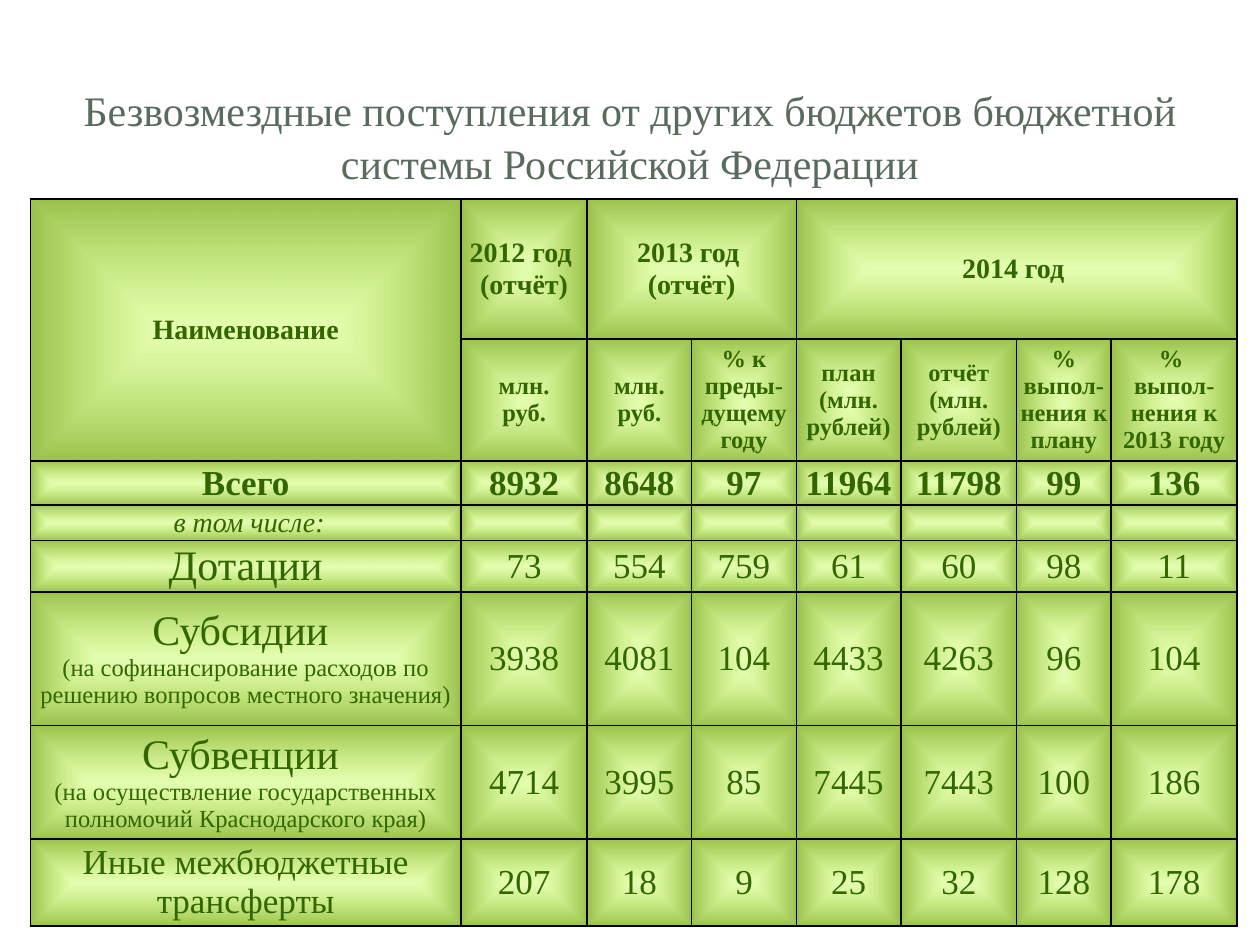
from dataclasses import dataclass

from lxml import etree
from pptx import Presentation
from pptx.dml.color import RGBColor
from pptx.enum.text import MSO_ANCHOR, PP_ALIGN
from pptx.oxml import parse_xml
from pptx.oxml.ns import nsdecls
from pptx.util import Inches, Pt

CENTER = PP_ALIGN.CENTER
MIDDLE, BOTTOM = MSO_ANCHOR.MIDDLE, MSO_ANCHOR.BOTTOM
SLIDE_W, SLIDE_H = Inches(10), Inches(7.5)


@dataclass(frozen=True)
class Theme:
    font: str = "Times New Roman"
    title: str = "596B5D"
    text: str = "336600"
    border: str = "000000"
    border_pt: float = 1
    glow: str = "CCFF66"
    edge: str = "9AC14D"
    big: int = 24
    figure: int = 20
    head: int = 16
    small: int = 14


THEME = Theme()
COLS = [3.42, 1, 0.83, 0.83, 0.83, 0.92, 0.75, 1]
ROWS = [1.11, 0.97, 0.35, 0.28, 0.41, 1.06, 0.9, 0.69]

TITLE = "Безвозмездные поступления от других бюджетов бюджетной системы Российской Федерации"
# (row, column, last row, last column, text)
YEARS = [
    (0, 0, 1, 0, "Наименование"),
    (0, 1, 0, 1, "2012 год \n(отчёт)"),
    (0, 2, 0, 3, "2013 год \n(отчёт)"),
    (0, 4, 0, 7, "2014 год "),
]
MEASURES = [
    "млн.\nруб.", "млн.\nруб.", "% к преды-дущему году", "план\n(млн. рублей)",
    "отчёт (млн.\nрублей)", "% выпол-нения к плану", "% \nвыпол-нения к 2013 году",
]
# (label, label size, figures)
BODY = [
    ("Всего", THEME.figure, [8932, 8648, 97, 11964, 11798, 99, 136]),
    (" в том числе:", THEME.head, [""] * 7),
    ("Дотации", THEME.big, [73, 554, 759, 61, 60, 98, 11]),
    ("Субсидии \n(на софинансирование расходов по решению вопросов местного значения)",
     THEME.big, [3938, 4081, 104, 4433, 4263, 96, 104]),
    ("Субвенции \n(на осуществление государственных полномочий Краснодарского края)",
     THEME.big, [4714, 3995, 85, 7445, 7443, 100, 186]),
    ("Иные межбюджетные трансферты", THEME.figure, [207, 18, 9, 25, 32, 128, 178]),
]
TOTAL_ROW, INTRO_ROW = 0, 1


def style_paragraph(p, size, color, bold=False, italic=False):
    p.alignment = CENTER
    for r in p.runs:
        r.font.name = THEME.font
        r.font.size = Pt(size)
        r.font.bold = bold
        r.font.italic = italic
        r.font.color.rgb = RGBColor.from_string(color)


def add_title(slide):
    s = slide.shapes.add_textbox(round(SLIDE_W * 0.05), round(SLIDE_H * 0.144),
                                 round(SLIDE_W * 0.9), round(SLIDE_H * 0.092))
    tf = s.text_frame
    tf.word_wrap = True
    tf.vertical_anchor = BOTTOM
    tf.margin_bottom = Inches(0.28)
    tf.text = TITLE
    p = tf.paragraphs[0]
    p.line_spacing = 1.05
    style_paragraph(p, THEME.big, THEME.title)


def paint_cell(cell):
    """Give a cell its black borders and a gradient that glows from the centre."""
    tc_pr = cell._tc.get_or_add_tcPr()
    for side in ("lnL", "lnR", "lnT", "lnB"):
        tc_pr.append(parse_xml(
            f'<a:{side} {nsdecls("a")} w="{Pt(THEME.border_pt)}"><a:solidFill>'
            f'<a:srgbClr val="{THEME.border}"/></a:solidFill></a:{side}>'))
    grad = etree.SubElement(tc_pr, tc_pr.tag.replace("tcPr", "gradFill"))
    for child in parse_xml(
            f'<a:gradFill {nsdecls("a")}><a:gsLst>'
            f'<a:gs pos="0"><a:srgbClr val="{THEME.glow}"><a:alpha val="50000"/></a:srgbClr></a:gs>'
            f'<a:gs pos="100000"><a:srgbClr val="{THEME.edge}"/></a:gs></a:gsLst>'
            '<a:path path="shape"><a:fillToRect l="50000" t="50000" r="50000" b="50000"/></a:path>'
            '</a:gradFill>'):
        grad.append(child)


def fill_cell(cell, text, size, bold=False, italic=False, note_size=None):
    """Write a cell; lines after the first take note_size when it is given."""
    cell.text_frame.text = str(text)
    for i, p in enumerate(cell.text_frame.paragraphs):
        p_size = note_size if i and note_size else size
        style_paragraph(p, p_size, THEME.text, bold, italic)
        if not p.runs:
            p._p.get_or_add_endParaRPr().set("sz", str(p_size * 100))


def add_budget_table(slide):
    s = slide.shapes.add_table(len(ROWS), len(COLS), Inches(0.24), Inches(1.58),
                               Inches(sum(COLS)), Inches(sum(ROWS)))
    table = s.table
    table.first_row = table.horz_banding = False
    for col, width in zip(table.columns, COLS):
        col.width = Inches(width)
    for row, height in zip(table.rows, ROWS):
        row.height = Inches(height)
    for cell in table.iter_cells():
        cell.margin_left = cell.margin_right = cell.margin_top = cell.margin_bottom = 0
        cell.vertical_anchor = MIDDLE
        paint_cell(cell)

    for top, left, bottom, right, text in YEARS:
        cell = table.cell(top, left)
        if (top, left) != (bottom, right):
            cell.merge(table.cell(bottom, right))
        fill_cell(cell, text, THEME.head, bold=True)
    for c, text in enumerate(MEASURES, 1):
        fill_cell(table.cell(1, c), text, THEME.small, bold=True)
    for i, (label, size, figures) in enumerate(BODY):
        bold, intro = i == TOTAL_ROW, i == INTRO_ROW
        fill_cell(table.cell(i + 2, 0), label, size, bold, intro, THEME.small)
        for c, figure in enumerate(figures, 1):
            fill_cell(table.cell(i + 2, c), figure,
                      THEME.small if intro else THEME.figure, bold)


def main():
    prs = Presentation()
    prs.slide_width, prs.slide_height = SLIDE_W, SLIDE_H
    slide = prs.slides.add_slide(prs.slide_layouts[6])
    add_title(slide)
    add_budget_table(slide)
    prs.save("out.pptx")


if __name__ == "__main__":
    main()
